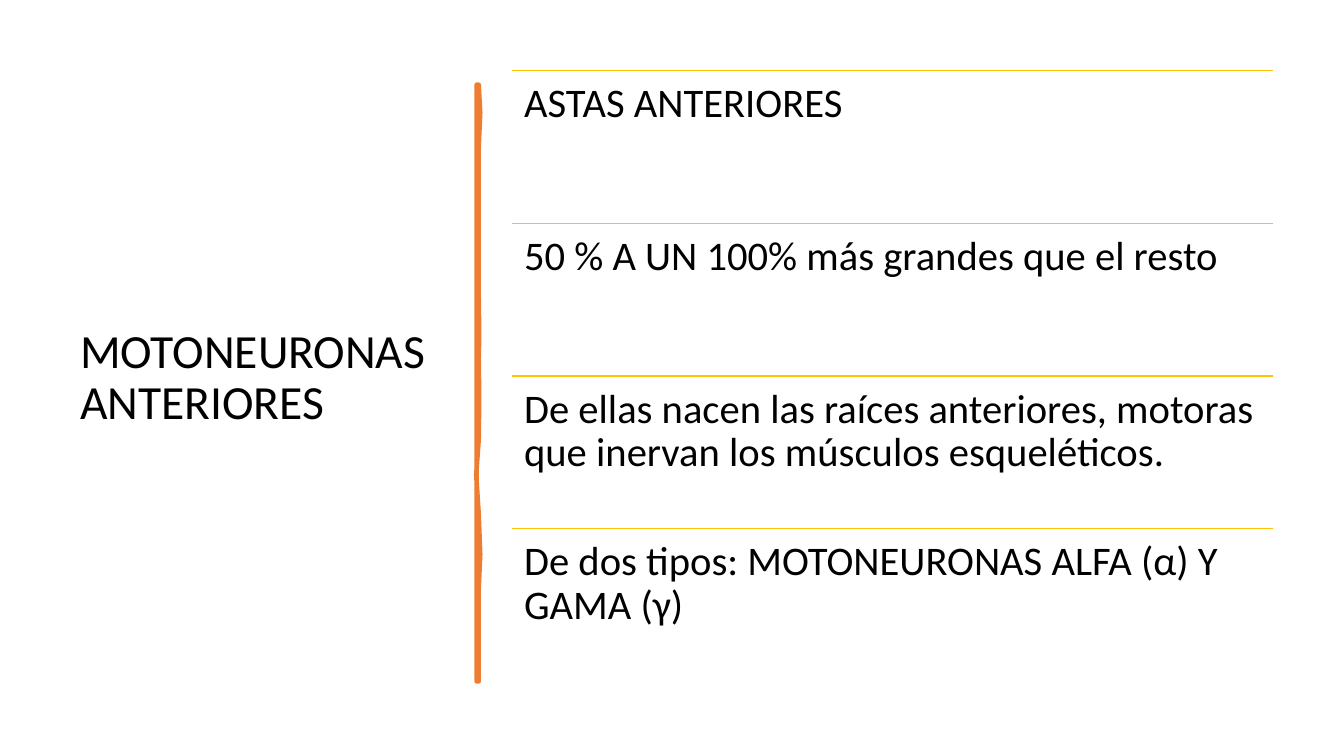
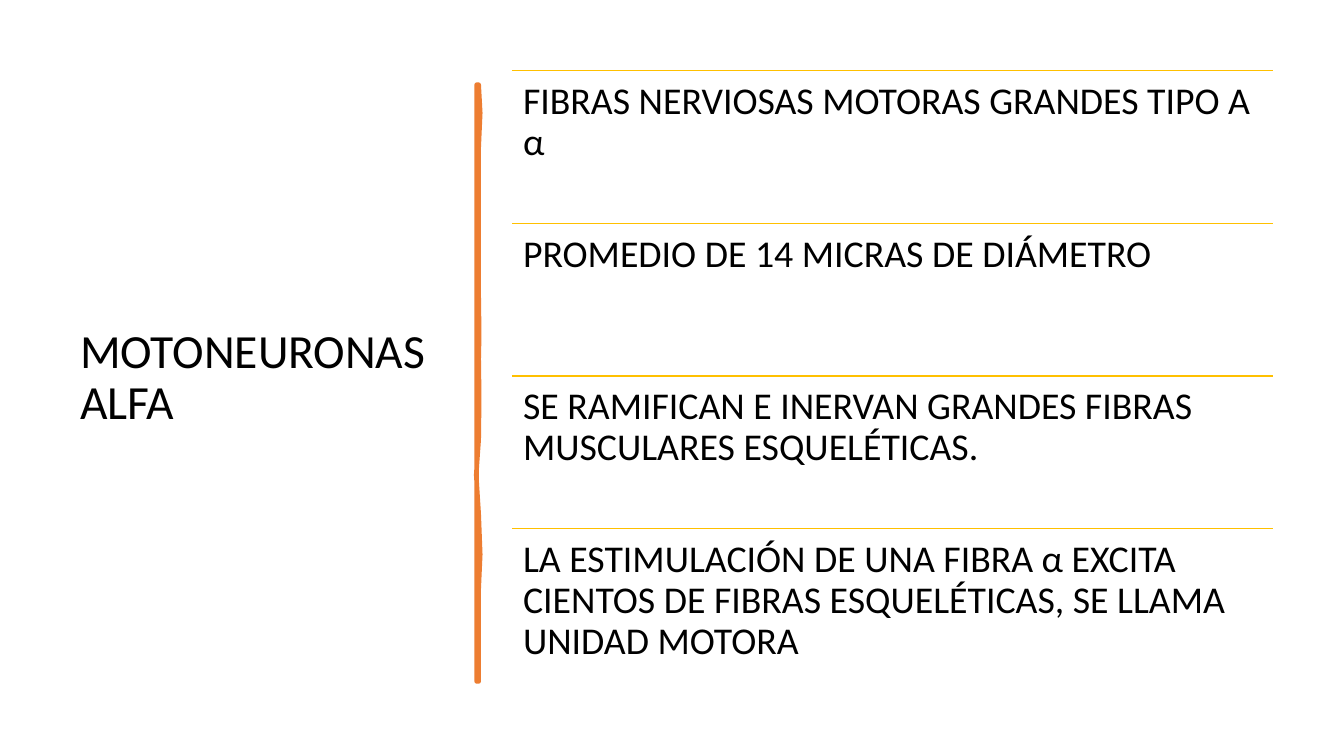
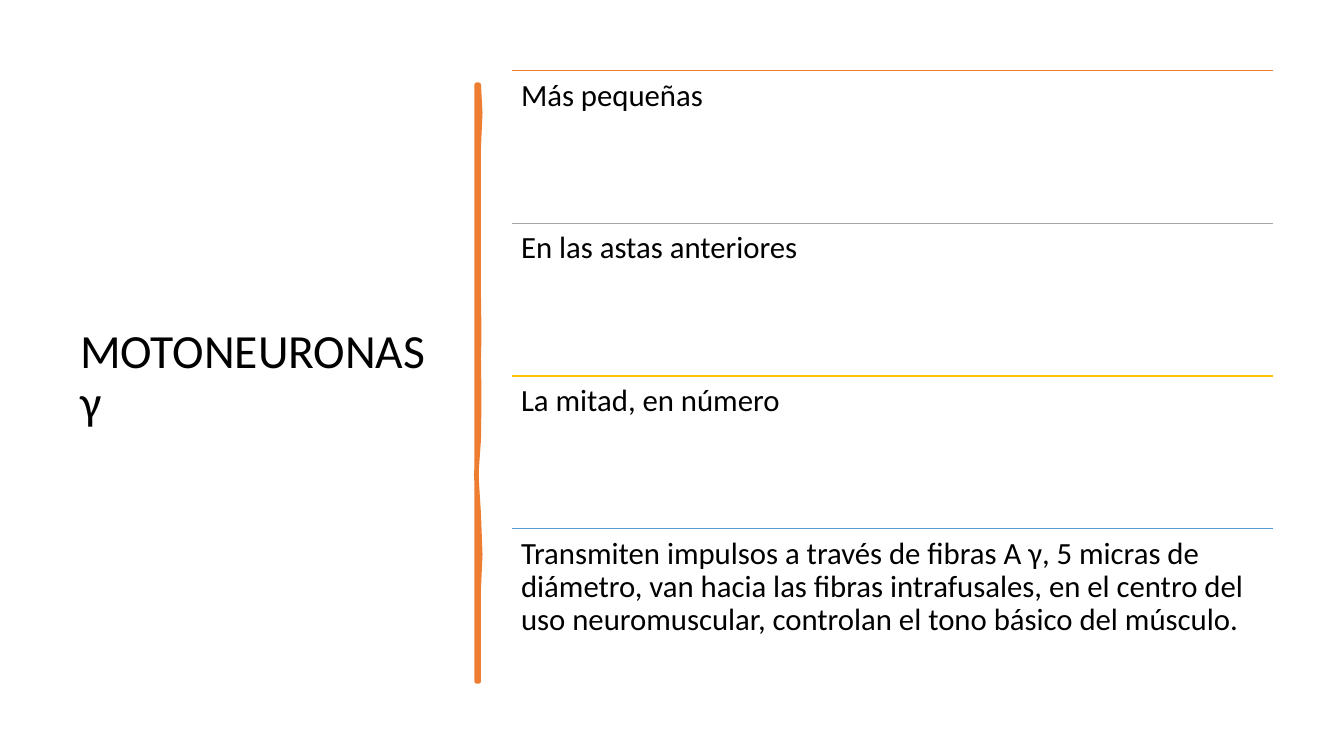
"""Build three slides on motor neurons, each with a title, a wavy bar and four ruled rows."""
from lxml.etree import SubElement
from pptx import Presentation
from pptx.dml.color import RGBColor
from pptx.enum.shapes import MSO_CONNECTOR
from pptx.enum.text import MSO_ANCHOR, MSO_AUTO_SIZE, PP_ALIGN
from pptx.oxml.ns import qn
from pptx.util import Pt

PX = 4572
ORANGE, GRAY, GOLD, BLUE, BLACK = "ED7D31", "A5A5A5", "FFC000", "5B9BD5", "000000"
LEFT, TOP, WIDTH, STEP = 1016, 140, 1510, 303
WAVE = [
    (950, 168), (953, 224), (950, 292), (950, 452), (950, 588), (951, 664),
    (950, 712), (951, 790), (950, 872), (945, 942), (950, 1020), (953, 1100),
    (950, 1168), (950, 1352), (946, 1352), (946, 1226), (946, 1114), (946, 954),
    (946, 830), (946, 670), (946, 500), (946, 362), (946, 168),
]

SLIDES = [
    ("MOTONEURONAS ANTERIORES", 29, 24, [
        ("ASTAS ANTERIORES", GOLD),
        ("50 % A UN 100% más grandes que el resto", GOLD),
        ("De ellas nacen las raíces anteriores, motoras que inervan los músculos esqueléticos.", GOLD),
        ("De dos tipos: MOTONEURONAS ALFA (α) Y GAMA (γ)", GOLD),
    ]),
    ("MOTONEURONAS ALFA", 27, 22, [
        ("FIBRAS NERVIOSAS MOTORAS GRANDES TIPO A α", GOLD),
        ("PROMEDIO DE 14 MICRAS DE DIÁMETRO", GOLD),
        ("SE RAMIFICAN E INERVAN GRANDES FIBRAS MUSCULARES ESQUELÉTICAS.", GOLD),
        ("LA ESTIMULACIÓN DE UNA FIBRA α EXCITA CIENTOS DE FIBRAS ESQUELÉTICAS, "
         "SE LLAMA UNIDAD MOTORA", GOLD),
    ]),
    ("MOTONEURONAS γ", 22, 18, [
        ("Más pequeñas", ORANGE),
        ("En las astas anteriores", GRAY),
        ("La mitad, en número", GOLD),
        ("Transmiten impulsos a través de fibras A γ, 5 micras de diámetro, "
         "van hacia las fibras intrafusales, en el centro del uso neuromuscular, "
         "controlan el tono básico del músculo.", BLUE),
    ]),
]


def paint(color, hue):
    color.rgb = RGBColor.from_string(hue)


def write(box, text, size=34, hue=BLACK, anchor=MSO_ANCHOR.TOP, inset=(20, 10)):
    frame = box.text_frame
    frame.word_wrap = True
    frame.auto_size = MSO_AUTO_SIZE.NONE
    frame.vertical_anchor = anchor
    frame.margin_left = frame.margin_right = inset[0] * PX
    frame.margin_top = frame.margin_bottom = inset[1] * PX
    para = frame.paragraphs[0]
    para.alignment = PP_ALIGN.LEFT
    para.line_spacing = 0.9
    run = para.add_run()
    run.text = text
    run.font.name = "Calibri"
    run.font.size = Pt(size)
    paint(run.font.color, hue)


deck = Presentation()
deck.slide_width, deck.slide_height = 2667 * PX, 1500 * PX

for name, size, pad, rows in SLIDES:
    slide = deck.slides.add_slide(deck.slide_layouts[5])
    shapes = slide.shapes
    title = shapes.title
    title.left, title.top, title.width, title.height = 139 * PX, 140 * PX, 748 * PX, 1222 * PX
    write(title, name, anchor=MSO_ANCHOR.MIDDLE)

    pen = shapes.build_freeform(*WAVE[0], scale=PX)
    pen.add_line_segments(WAVE[1:], close=True)
    bar = pen.convert_to_shape()
    bar.shadow.inherit = False
    bar.fill.solid()
    paint(bar.fill.fore_color, ORANGE)
    paint(bar.line.color, ORANGE)
    bar.line.width = Pt(3.25)
    SubElement(bar.line.fill._xPr, qn("a:round"))

    for i, (text, hue) in enumerate(rows):
        top = TOP + i * STEP
        rule = shapes.add_connector(
            MSO_CONNECTOR.STRAIGHT, LEFT * PX, top * PX, (LEFT + WIDTH) * PX, top * PX)
        paint(rule.line.color, hue)
        rule.line.width = Pt(1)
        SubElement(rule._element.spPr, qn("a:effectLst"))
        box = shapes.add_textbox(LEFT * PX, top * PX, WIDTH * PX, STEP * PX)
        write(box, text, size=size, inset=(pad, pad))

deck.save("out.pptx")
